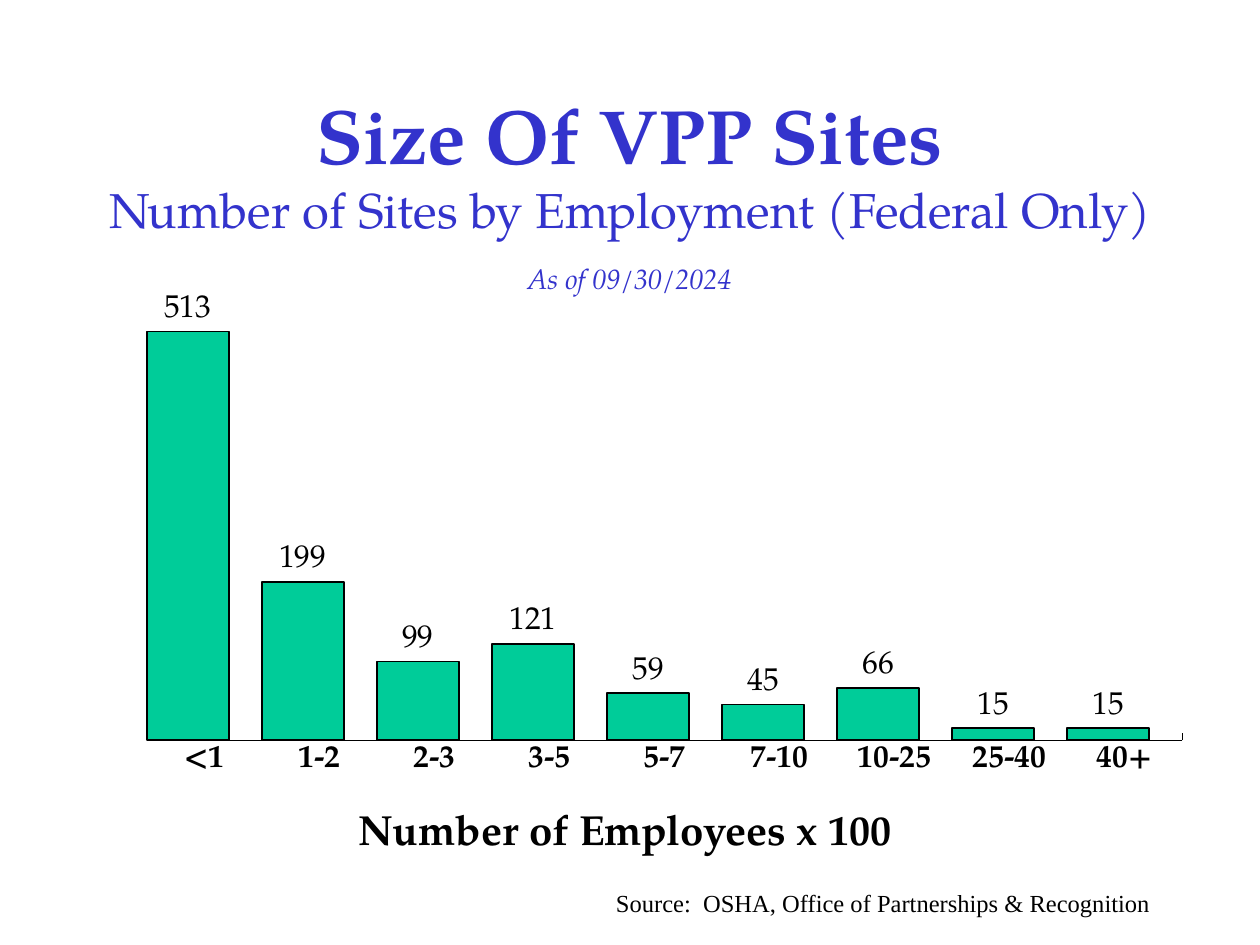
from lxml import etree
from pptx import Presentation
from pptx.chart.data import CategoryChartData
from pptx.dml.color import RGBColor
from pptx.enum.chart import (XL_CHART_TYPE, XL_LABEL_POSITION,
                             XL_TICK_LABEL_POSITION, XL_TICK_MARK)
from pptx.enum.text import MSO_ANCHOR, MSO_AUTO_SIZE, PP_ALIGN
from pptx.oxml.ns import qn
from pptx.util import Inches, Pt

COLORS = {"ink": "000000", "title": "3333CC", "bar": "00CC99", "pale": "CCCCFF"}
SERIF, SOURCE_FONT = "TeX Gyre Pagella", "Times New Roman"

SITES = {"<1": 513, "1-2": 199, "2-3": 99, "3-5": 121, "5-7": 59,
         "7-10": 45, "10-25": 66, "25-40": 15, "40+": 15}
PLOT_AREA = {"x": 0.022, "y": 0, "w": 0.976, "h": 0.881}


def color(name):
    return RGBColor.from_string(COLORS[name])


class SlideBuilder:
    def __init__(self, slide):
        self.slide = slide

    def set_font(self, font, color_name="ink", **values):
        for name, value in {"name": SERIF, "bold": False, **values}.items():
            setattr(font, name, value)
        font.color.rgb = color(color_name)

    def add_text(self, box, lines, align=PP_ALIGN.LEFT, **frame_values):
        """Lines are (text, font values) pairs, split by line breaks."""
        shape = self.slide.shapes.add_textbox(*map(Inches, box))
        frame = shape.text_frame
        for name, value in {"word_wrap": True, **frame_values}.items():
            setattr(frame, name, value)
        paragraph = frame.paragraphs[0]
        paragraph.alignment = align
        for index, (text, font_values) in enumerate(lines):
            if index:
                paragraph.add_line_break()
            run = paragraph.add_run()
            run.text = text
            self.set_font(run.font, **font_values)

    def add_column_chart(self, box, values):
        # Two empty series keep each column at the left of its category
        data = CategoryChartData()
        data.categories = list(values)
        data.add_series("Series 1", list(values.values()))
        for name in ("Series 2", "Series 3"):
            data.add_series(name, [None] * len(values))
        chart = self.slide.shapes.add_chart(
            XL_CHART_TYPE.COLUMN_CLUSTERED, *map(Inches, box), data).chart
        chart.has_legend = chart.has_title = False
        self.set_font(chart.font, size=Pt(18), bold=True)
        self.place_plot(chart)

        # Columns and value labels
        plot = chart.plots[0]
        plot.gap_width, plot.overlap, plot.vary_by_categories = 0, 80, False
        for series, fill in zip(plot.series, ("bar", "title", "pale")):
            series.format.fill.solid()
            series.format.fill.fore_color.rgb = color(fill)
            series.format.line.color.rgb = color("ink")
            series.format.line.width = Pt(1)
        labels = plot.series[0].data_labels
        labels.show_value = True
        labels.position = XL_LABEL_POSITION.OUTSIDE_END
        self.set_font(labels.font, size=Pt(18))

        # Axes
        category_axis, value_axis = chart.category_axis, chart.value_axis
        category_axis.major_tick_mark = XL_TICK_MARK.INSIDE
        category_axis.format.line.color.rgb = color("ink")
        category_axis.format.line.width = Pt(0.25)
        value_axis.minimum_scale, value_axis.maximum_scale = 0, 600
        value_axis.has_major_gridlines = False
        value_axis.major_tick_mark = XL_TICK_MARK.NONE
        value_axis.tick_label_position = XL_TICK_LABEL_POSITION.NONE
        value_axis.format.line.fill.background()

    def place_plot(self, chart):
        plot_area = chart._chartSpace.chart.plotArea
        for old_layout in plot_area.findall(qn("c:layout")):
            plot_area.remove(old_layout)
        layout = etree.Element(qn("c:layout"))
        manual = etree.SubElement(layout, qn("c:manualLayout"))
        settings = {"layoutTarget": "inner", "xMode": "edge", "yMode": "edge",
                    **PLOT_AREA}
        for tag, value in settings.items():
            etree.SubElement(manual, qn("c:" + tag)).set("val", str(value))
        plot_area.insert(0, layout)


def main():
    presentation = Presentation()
    presentation.slide_width, presentation.slide_height = Inches(10), Inches(7.5)
    builder = SlideBuilder(
        presentation.slides.add_slide(presentation.slide_layouts[6]))

    # Chart
    builder.add_column_chart((0.98, 2.08, 8.42, 4.31), SITES)

    # Title and date
    heading = {"align": PP_ALIGN.CENTER, "vertical_anchor": MSO_ANCHOR.MIDDLE}
    builder.add_text((0.75, 0.67, 8.5, 1.25), [
        ("Size Of VPP Sites",
         {"size": Pt(44), "bold": True, "color_name": "title"}),
        ("Number of Sites by Employment (Federal Only)",
         {"size": Pt(28), "color_name": "title"}),
    ], **heading)
    builder.add_text((3.58, 1.83, 2.83, 0.75), [
        ("As of 09/30/2024",
         {"size": Pt(16), "italic": True, "color_name": "title"}),
    ], **heading)

    # Axis caption and source
    builder.add_text((2.75, 6.33, 4.6, 0.5), [
        ("Number of Employees x 100", {"size": Pt(24), "bold": True}),
    ], word_wrap=False, auto_size=MSO_AUTO_SIZE.SHAPE_TO_FIT_TEXT)
    builder.add_text((4.79, 7, 5.12, 0.33), [
        ("Source:  OSHA, Office of Partnerships & Recognition",
         {"size": Pt(14), "name": SOURCE_FONT}),
    ], auto_size=MSO_AUTO_SIZE.SHAPE_TO_FIT_TEXT)

    presentation.save("out.pptx")


if __name__ == "__main__":
    main()
